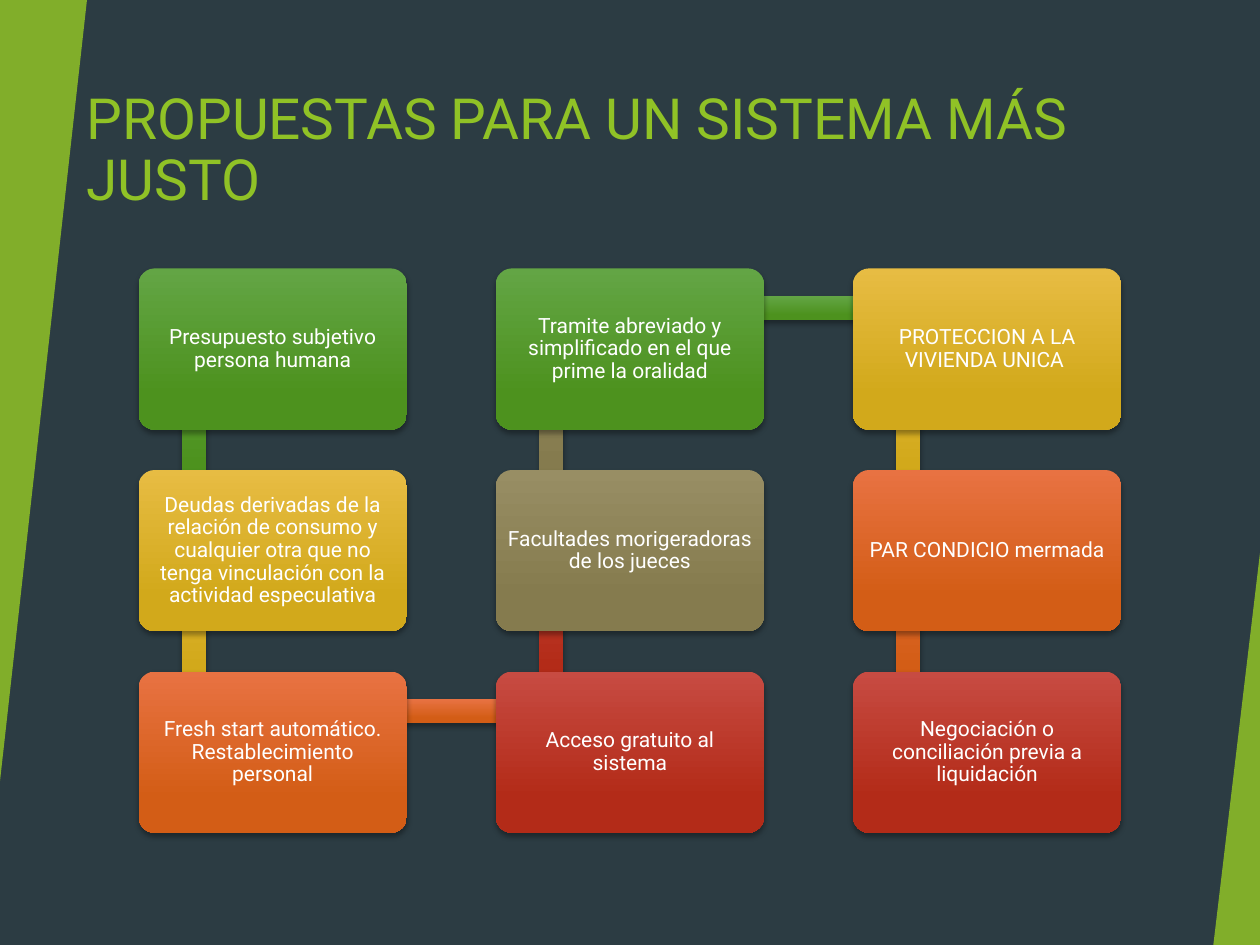
import lxml.etree
import pptx
import pptx.dml.color
import pptx.enum.shapes
import pptx.enum.text
import pptx.oxml.ns
import pptx.util

Inches, Pt = pptx.util.Inches, pptx.util.Pt
RGBColor = pptx.dml.color.RGBColor
MSO_SHAPE = pptx.enum.shapes.MSO_SHAPE
qn = pptx.oxml.ns.qn

DARK = RGBColor(0x2C, 0x3C, 0x43)
LIME = RGBColor(0x90, 0xC2, 0x26)
WHITE = RGBColor(0xFF, 0xFF, 0xFF)
GREEN = RGBColor(0x63, 0xA5, 0x45), RGBColor(0x4D, 0x92, 0x1E)
YELLOW = RGBColor(0xE7, 0xBC, 0x43), RGBColor(0xD2, 0xA9, 0x1B)
ORANGE = RGBColor(0xE8, 0x72, 0x42), RGBColor(0xD3, 0x5D, 0x16)
RED = RGBColor(0xC7, 0x4B, 0x42), RGBColor(0xB3, 0x2B, 0x18)
OLIVE = RGBColor(0x98, 0x8E, 0x64), RGBColor(0x85, 0x7B, 0x4E)
FONT = "Roboto"

TITLE = "PROPUESTAS PARA UN SISTEMA MÁS JUSTO"
PROPOSALS = [
    ("Presupuesto subjetivo persona humana", GREEN),
    ("Deudas derivadas de la relación de consumo y cualquier otra que no "
     "tenga vinculación con la actividad especulativa", YELLOW),
    ("Fresh start automático. Restablecimiento personal", ORANGE),
    ("Acceso gratuito al sistema", RED),
    ("Facultades morigeradoras de los jueces", OLIVE),
    ("Tramite abreviado y simplificado en el que prime la oralidad", GREEN),
    ("PROTECCION A LA VIVIENDA UNICA ", YELLOW),
    ("PAR CONDICIO mermada", ORANGE),
    ("Negociación o conciliación previa a liquidación", RED),
]

SLIDE_WIDTH, SLIDE_HEIGHT = 10, 7.5
ROWS = 3
GRID_LEFT, GRID_TOP = 1.1, 2.13
COLUMN_STEP, ROW_STEP = 2.835, 1.6
BOX_WIDTH, BOX_HEIGHT = 2.13, 1.28
JOINT_X, JOINT_Y = 0.44, 0.315
BAR = 0.19


def box_origin(index):
    column, step = divmod(index, ROWS)
    row = ROWS - 1 - step if column % 2 else step
    return GRID_LEFT + column * COLUMN_STEP, GRID_TOP + row * ROW_STEP


def add_shape(slide, kind, left, top, width, height):
    shape = slide.shapes.add_shape(
        kind, Inches(left), Inches(top), Inches(width), Inches(height))
    shape.shadow.inherit = False
    shape.line.fill.background()
    return shape


def add_wedge(slide, left, top, width, height, rotation):
    wedge = add_shape(slide, MSO_SHAPE.ISOSCELES_TRIANGLE, left, top, width, height)
    wedge.adjustments[0] = 1
    wedge.rotation = rotation
    wedge.fill.solid()
    wedge.fill.fore_color.rgb = LIME
    color = wedge.fill._xPr.find(".//" + qn("a:srgbClr"))
    lxml.etree.SubElement(color, qn("a:alpha"), val="85000")


def add_glossy(slide, kind, left, top, width, height, colors):
    shape = add_shape(slide, kind, left, top, width, height)
    shape.fill.gradient()
    shape.fill.gradient_angle = 270
    for stop, position, color in zip(shape.fill.gradient_stops, (0, 0.78), colors):
        stop.position = position
        stop.color.rgb = color
    effects = shape.element.spPr.find(qn("a:effectLst"))
    shadow = lxml.etree.SubElement(
        effects, qn("a:outerShdw"), blurRad=str(Pt(3)), dist=str(Pt(2)),
        dir="5400000", rotWithShape="0")
    black = lxml.etree.SubElement(shadow, qn("a:srgbClr"), val="000000")
    lxml.etree.SubElement(black, qn("a:alpha"), val="35000")
    return shape


def write(frame, text, size, color, alignment, anchor):
    frame.word_wrap = True
    frame.vertical_anchor = anchor
    paragraph = frame.paragraphs[0]
    paragraph.text = text
    paragraph.alignment = alignment
    paragraph.line_spacing = 0.9
    paragraph.font.name = FONT
    paragraph.font.size = Pt(size)
    paragraph.font.color.rgb = color


def add_bar(slide, index, colors):
    (x1, y1), (x2, y2) = box_origin(index), box_origin(index + 1)
    left = min(x1, x2) + JOINT_X
    top = min(y1, y2) + JOINT_Y
    if x1 == x2:
        area = left - BAR / 2, top, BAR, ROW_STEP
    else:
        area = left, top - BAR / 2, COLUMN_STEP, BAR
    add_glossy(slide, MSO_SHAPE.RECTANGLE, *area, colors)


def add_proposal(slide, index, text, colors):
    box = add_glossy(slide, MSO_SHAPE.ROUNDED_RECTANGLE, *box_origin(index),
                     BOX_WIDTH, BOX_HEIGHT, colors)
    box.adjustments[0] = 0.1
    frame = box.text_frame
    frame.margin_left = frame.margin_right = Inches(0.05)
    frame.margin_top = frame.margin_bottom = Inches(0.05)
    write(frame, text, 12, WHITE, pptx.enum.text.PP_ALIGN.CENTER,
          pptx.enum.text.MSO_ANCHOR.MIDDLE)


def main():
    presentation = pptx.Presentation()
    presentation.slide_width = Inches(SLIDE_WIDTH)
    presentation.slide_height = Inches(SLIDE_HEIGHT)
    slide = presentation.slides.add_slide(presentation.slide_layouts[6])
    slide.background.fill.solid()
    slide.background.fill.fore_color.rgb = DARK

    title = slide.shapes.add_textbox(
        Inches(0.59), Inches(0.67), Inches(9.37), Inches(0.96))
    write(title.text_frame, TITLE, 32.4, LIME, pptx.enum.text.PP_ALIGN.LEFT,
          pptx.enum.text.MSO_ANCHOR.TOP)

    add_wedge(slide, 0, 0, 0.69, 6.2, 180)
    add_wedge(slide, SLIDE_WIDTH - 0.37, SLIDE_HEIGHT - 3.11, 0.37, 3.11, 0)

    for index, (text, colors) in enumerate(PROPOSALS):
        if index < len(PROPOSALS) - 1:
            add_bar(slide, index, colors)
        add_proposal(slide, index, text, colors)

    presentation.save("out.pptx")


if __name__ == "__main__":
    main()
